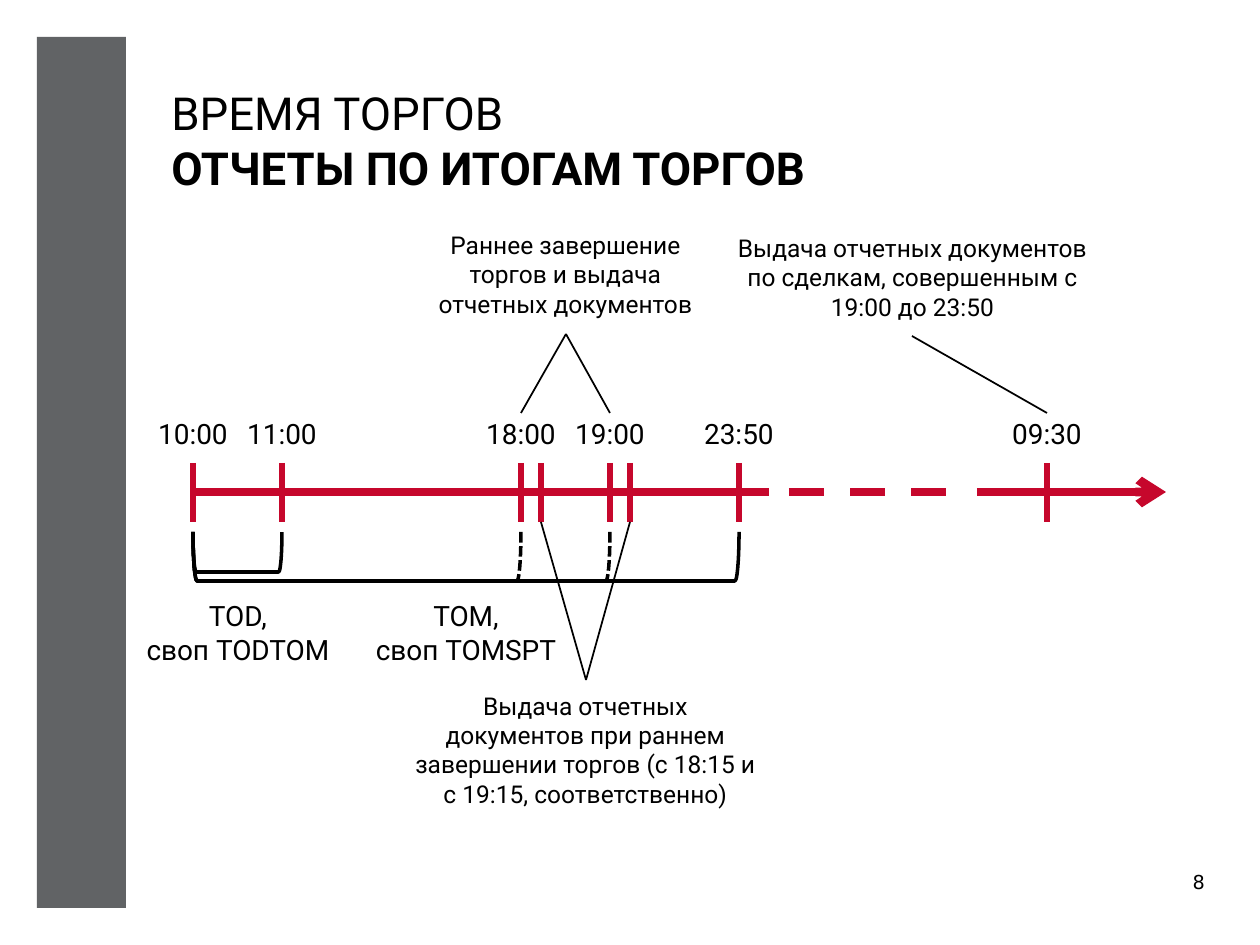
from dataclasses import dataclass

from lxml.etree import SubElement
from pptx import Presentation
from pptx.dml.color import RGBColor
from pptx.enum.dml import MSO_LINE
from pptx.enum.shapes import MSO_CONNECTOR, MSO_SHAPE
from pptx.enum.text import MSO_ANCHOR, PP_ALIGN
from pptx.oxml.ns import qn
from pptx.util import Emu, Pt


@dataclass(frozen=True)
class Theme:
    font: str = "Roboto"
    number_font: str = "DejaVu Sans"
    ink: str = "000000"
    red: str = "C6072C"
    gray: str = "616365"
    title_size: int = 26
    label_size: int = 16
    note_size: int = 14
    number_size: int = 11
    axis_width: int = 5
    tick_width: int = 3
    bracket_width: int = 2
    leader_width: int = 1


def px(value):
    return Emu(round(value * 914400 / 126))


class SlideBuilder:
    def __init__(self, slide, theme):
        self.slide = slide
        self.theme = theme

    def bar(self, left, top, width, height):
        shape = self.slide.shapes.add_shape(
            MSO_SHAPE.RECTANGLE, px(left), px(top), px(width), px(height))
        shape.shadow.inherit = False
        shape.fill.solid()
        shape.fill.fore_color.rgb = RGBColor.from_string(self.theme.gray)
        shape.line.fill.background()

    def text(self, text, left, top, width, height, size, align=PP_ALIGN.CENTER,
             anchor=MSO_ANCHOR.MIDDLE, font=None):
        box = self.slide.shapes.add_textbox(px(left), px(top), px(width), px(height))
        frame = box.text_frame
        frame.word_wrap = True
        frame.vertical_anchor = anchor
        frame.text = text
        for paragraph in frame.paragraphs:
            paragraph.alignment = align
            for run in paragraph.runs:
                run.font.name = font or self.theme.font
                run.font.size = Pt(size)
                run.font.color.rgb = RGBColor.from_string(self.theme.ink)
        return frame

    def title(self, text):
        frame = self.text(text, 159, 79, 1022, 155, self.theme.title_size,
                          PP_ALIGN.LEFT, MSO_ANCHOR.TOP)
        frame.paragraphs[0].runs[-1].font.bold = True

    def page_number(self, text):
        frame = self.text(text, 1155, 853, 50, 49, self.theme.number_size,
                          PP_ALIGN.RIGHT, MSO_ANCHOR.TOP, self.theme.number_font)
        frame.margin_left = frame.margin_right = 0
        frame.paragraphs[0].line_spacing = 1.5

    def line(self, start, end, color, width, dash=None, arrow=False):
        connector = self.slide.shapes.add_connector(
            MSO_CONNECTOR.STRAIGHT, px(start[0]), px(start[1]), px(end[0]), px(end[1]))
        connector.line.color.rgb = RGBColor.from_string(color)
        connector.line.width = Pt(width)
        if dash:
            connector.line.dash_style = dash
        if arrow:
            SubElement(connector.line._get_or_add_ln(), qn("a:tailEnd"), type="arrow")
        SubElement(connector._element.spPr, qn("a:effectLst"))

    def axis(self, left, right, dash=None, arrow=False):
        self.line((left, 492), (right, 492), self.theme.red,
                  self.theme.axis_width, dash, arrow)

    def tick(self, x):
        self.line((x, 463), (x, 522), self.theme.red, self.theme.tick_width)

    def leader(self, start, end):
        self.line(start, end, self.theme.ink, self.theme.leader_width)

    def bracket(self, left, right, depth, dash=None):
        span = right - left
        top = 532
        shape = self.slide.shapes.add_shape(
            MSO_SHAPE.LEFT_BRACKET, px((left + right - depth) / 2),
            px(top + (depth - span) / 2), px(depth), px(span))
        shape.rotation = 270
        shape.shadow.inherit = False
        shape.fill.background()
        shape.line.color.rgb = RGBColor.from_string(self.theme.ink)
        shape.line.width = Pt(self.theme.bracket_width)
        if dash:
            shape.line.dash_style = dash


def main():
    presentation = Presentation()
    presentation.slide_width = px(1260)
    presentation.slide_height = px(945)
    slide = presentation.slides.add_slide(presentation.slide_layouts[6])
    theme = Theme()
    builder = SlideBuilder(slide, theme)

    builder.bar(37, 37, 89, 871)
    builder.page_number("8")
    builder.title("ВРЕМЯ ТОРГОВ\vОТЧЕТЫ ПО ИТОГАМ ТОРГОВ")

    times = {"10:00": 193, "11:00": 282, "18:00": 521,
             "19:00": 610, "23:50": 739, "09:30": 1047}
    opening, closing = times["10:00"], times["23:50"]
    early_reports = (541, 630)

    builder.axis(opening, 769)
    builder.axis(789, 968, dash=MSO_LINE.DASH)
    builder.axis(977, 1166, arrow=True)
    for label, x in times.items():
        builder.tick(x)
        builder.text(label, x - 50, 413, 100, 40, theme.label_size)
    for x in early_reports:
        builder.tick(x)

    builder.bracket(opening, times["11:00"], 40)
    builder.bracket(opening, closing, 49)
    for label in ("18:00", "19:00"):
        builder.bracket(opening, times[label], 49, MSO_LINE.SQUARE_DOT)
        builder.leader((566, 334), (times[label], 413))
    for x in early_reports:
        builder.leader((x, 522), (586, 680))
    builder.leader((912, 336), (times["09:30"], 413))

    for text, left in (("TOD,\nсвоп TODTOM", 124), ("TOM,\nсвоп TOMSPT", 352)):
        builder.text(text, left, 592, 228, 80, theme.label_size)

    notes = (
        ("Раннее завершение торгов и выдача отчетных документов", 422, 214, 287, 120),
        ("Выдача отчетных документов по сделкам, совершенным с 19:00 до 23:50",
         719, 217, 387, 120),
        ("Выдача отчетных документов при раннем завершении торгов "
         "(с 18:15 и с 19:15, соответственно)", 402, 680, 367, 139),
    )
    for text, left, top, width, height in notes:
        builder.text(text, left, top, width, height, theme.note_size)

    presentation.save("out.pptx")


if __name__ == "__main__":
    main()
